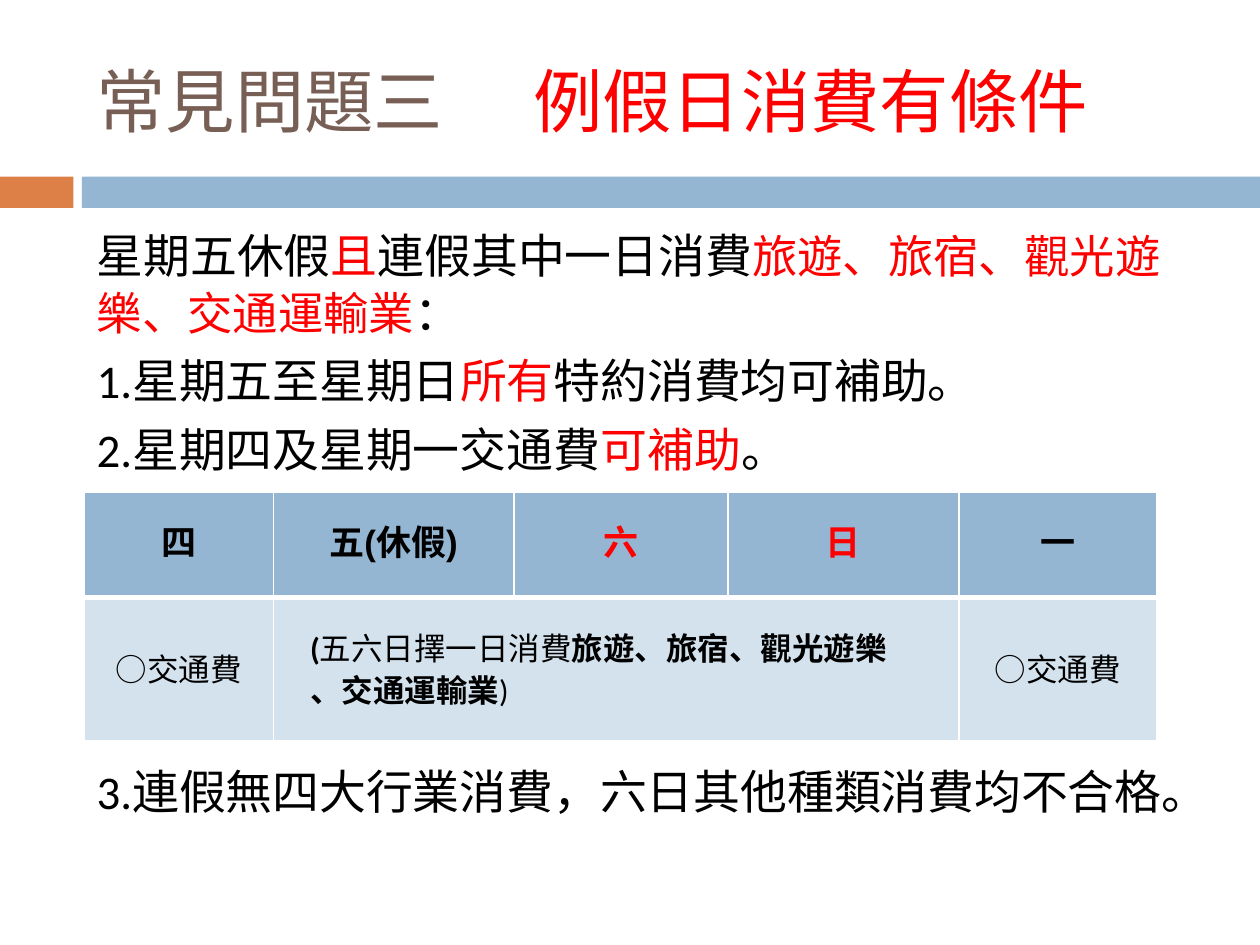
from lxml import etree
from pptx import Presentation
from pptx.dml.color import RGBColor
from pptx.enum.shapes import MSO_SHAPE
from pptx.enum.text import MSO_ANCHOR, PP_ALIGN
from pptx.oxml.ns import qn
from pptx.util import Cm, Pt

RECT = MSO_SHAPE.RECTANGLE
MIDDLE, TOP = MSO_ANCHOR.MIDDLE, MSO_ANCHOR.TOP
CENTER, LEFT = PP_ALIGN.CENTER, PP_ALIGN.LEFT

COLORS = {
    "brown": "775F55", "red": "FF0000", "black": "000000", "white": "FFFFFF",
    "orange": "DD8047", "blue": "94B6D2", "pale": "D4E2ED",
}
MARGIN, TEXT_WIDTH = 1.7, 22.66
BODY_SIZE = 26.8
COL_WIDTHS = [3.81, 4.85, 4.32, 4.65, 3.99]
ROW_HEIGHTS = [2.11, 2.9]


def rgb(name):
    return RGBColor.from_string(COLORS[name])


def add_bar(slide, left, width, color):
    sp = slide.shapes.add_shape(RECT, Cm(left), Cm(3.56), Cm(width), Cm(0.63))
    sp.shadow.inherit = False
    sp.fill.solid()
    sp.fill.fore_color.rgb = rgb(color)
    sp.line.fill.background()


def add_runs(p, runs, size, font="Calibri"):
    """Each run is (text, color) with an optional dict of font settings."""
    p.font.name, p.font.size = font, Pt(size)
    for text, color, *extra in runs:
        r = p.add_run()
        r.text = text
        r.font.color.rgb = rgb(color)
        for key, value in (extra[0] if extra else {}).items():
            setattr(r.font, key, value)


def add_text(slide, top, height, paragraphs, size, anchor=TOP):
    sp = slide.shapes.add_textbox(Cm(MARGIN), Cm(top), Cm(TEXT_WIDTH), Cm(height))
    tf = sp.text_frame
    tf.word_wrap = True
    tf.vertical_anchor = anchor
    for i, runs in enumerate(paragraphs):
        p = tf.add_paragraph() if i else tf.paragraphs[0]
        if i:
            p.space_before = Pt(7)
        add_runs(p, runs, size)
    return tf


def set_tab(p, position):
    tabs = etree.SubElement(p._p.get_or_add_pPr(), qn("a:tabLst"))
    etree.SubElement(tabs, qn("a:tab"), pos=str(Cm(position)), algn="l")
    # Tab stops come before the default run properties
    tabs.getparent().insert(0, tabs)


def set_borders(cell, widths):
    tc_pr = cell._tc.get_or_add_tcPr()
    for side, width in zip("LRTB", widths):
        ln = etree.SubElement(tc_pr, qn(f"a:ln{side}"), w=str(Pt(width)))
        fill = etree.SubElement(ln, qn("a:solidFill"))
        etree.SubElement(fill, qn("a:srgbClr"), val=COLORS["white"])


def fill_cell(cell, paragraphs, size, font, align=CENTER, indent=0):
    cell.vertical_anchor = MIDDLE
    for i, runs in enumerate(paragraphs):
        p = cell.text_frame.add_paragraph() if i else cell.text_frame.paragraphs[0]
        p.alignment = align
        p.line_spacing = Pt(24)
        if indent:
            p._p.get_or_add_pPr().set("marL", str(Cm(indent)))
        add_runs(p, runs, size, font)


def add_schedule(slide):
    shape = slide.shapes.add_table(
        len(ROW_HEIGHTS), len(COL_WIDTHS), Cm(MARGIN), Cm(9.93),
        Cm(sum(COL_WIDTHS)), Cm(sum(ROW_HEIGHTS)))
    table = shape.table
    for col, width in zip(table.columns, COL_WIDTHS):
        col.width = Cm(width)
    for i, (row, height) in enumerate(zip(table.rows, ROW_HEIGHTS)):
        row.height = Cm(height)
        for cell in row.cells:
            cell.margin_left = cell.margin_right = Cm(0.18)
            cell.margin_top = cell.margin_bottom = 0
            set_borders(cell, (1, 1, 3, 1) if i else (1, 1, 1, 3))
            cell.fill.solid()
            cell.fill.fore_color.rgb = rgb("pale" if i else "blue")

    # Header: days of the week
    bold = {"bold": True}
    for c, day in enumerate(["四", "五(休假)", "六", "日", "一"]):
        color = "red" if day in "六日" else "black"
        fill_cell(table.cell(0, c), [[(day, color, bold)]], 20, "Arial")

    # Subsidy conditions
    for c in (0, 4):
        fill_cell(table.cell(1, c), [[("○交通費", "black")]], 18, "Arial")
    table.cell(1, 1).merge(table.cell(1, 3))
    fill_cell(table.cell(1, 1), [
        [("(", "black", bold), ("五六日擇一日消費", "black"),
         ("旅遊、旅宿、觀光遊樂", "black", bold)],
        [("、交通運輸業", "black", bold), (")", "black")],
    ], 18, "Calibri", LEFT, indent=0.56)


def main():
    prs = Presentation()
    prs.slide_width, prs.slide_height = Cm(25.4), Cm(19.05)
    slide = prs.slides.add_slide(prs.slide_layouts[6])

    # Divider bars
    add_bar(slide, 0, 1.48, "orange")
    add_bar(slide, 1.65, 23.75, "blue")

    # Title
    title = [("常見問題三\t", "brown"), ("例假日消費有條件", "red")]
    tf = add_text(slide, 0.64, 2.74, [title], 39.6, MIDDLE)
    set_tab(tf.paragraphs[0], 8.8)

    # Rules above the table
    add_text(slide, 4.45, 5.4, [
        [("星期五休假", "black"), ("且", "red"), ("連假其中一日消費", "black"),
         ("旅遊、旅宿、觀光遊樂、交通運輸業", "red", {"size": Pt(25.9)}),
         ("：", "black")],
        [("1.星期五至星期日", "black"), ("所有", "red"),
         ("特約消費均可補助。", "black")],
        [("2.星期四及星期一交通費", "black"), ("可補助", "red"), ("。", "black")],
    ], BODY_SIZE)

    add_schedule(slide)

    # Rule below the table
    add_text(slide, 15.24, 1.5, [
        [("3.連假無四大行業消費，六日其他種類消費均不合格。", "black")],
    ], BODY_SIZE)

    prs.save("out.pptx")


if __name__ == "__main__":
    main()
